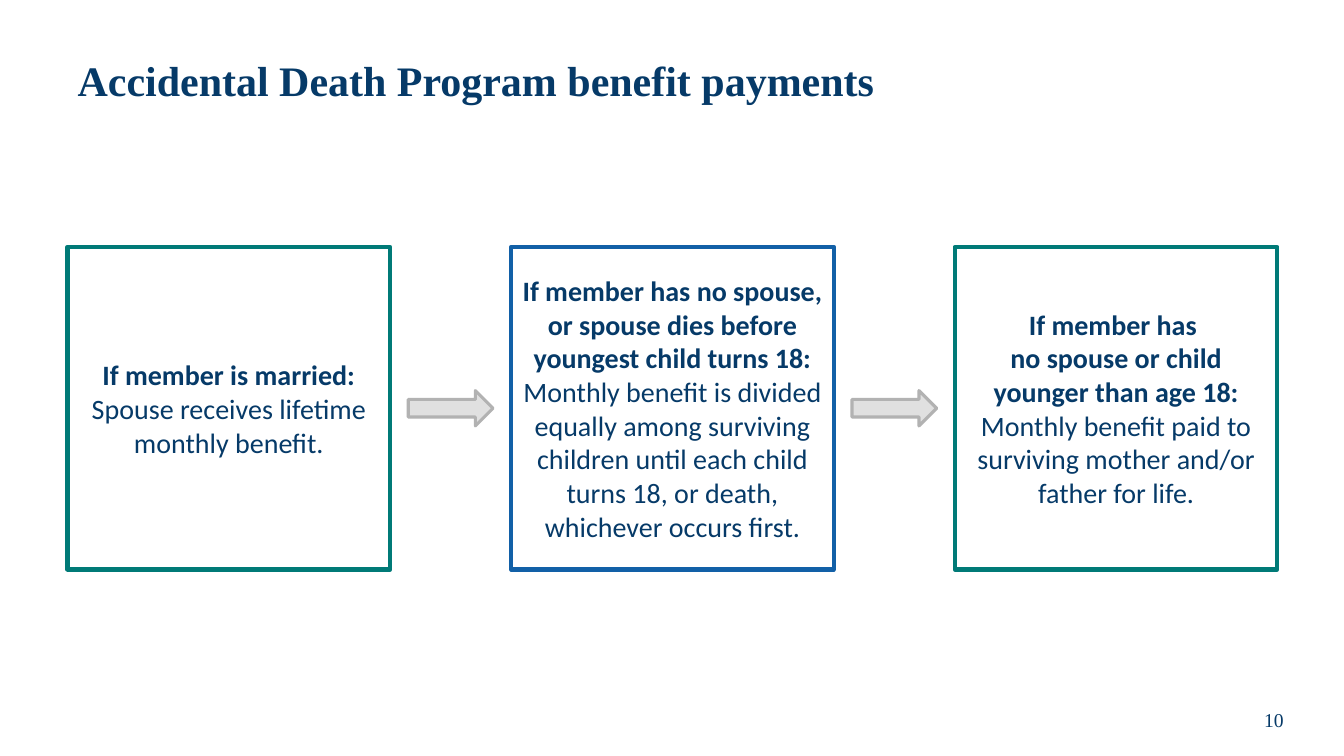
from pptx import Presentation
from pptx import util as u
from pptx.dml import color
from pptx.enum import shapes, text

NAVY, TEAL, BLUE = "063A68", "007A77", "1260A7"
BOX, PITCH, LEFT, TOP = 3.2, 4.4, 0.67, 2.45
ARROW_WIDTH, ARROW_HEIGHT = 0.84, 0.35


def rgb(value):
    return color.RGBColor.from_string(value)


def write(frame, *lines, font="Calibri", size=20, align=text.PP_ALIGN.CENTER,
          bold=(True, False), spacing=1.0, inset=0.1):
    frame.word_wrap = True
    frame.auto_size = text.MSO_AUTO_SIZE.NONE
    frame.vertical_anchor = text.MSO_ANCHOR.MIDDLE
    frame.margin_left = frame.margin_right = u.Inches(0.1)
    frame.margin_top = frame.margin_bottom = u.Inches(inset)
    for index, (line, weight) in enumerate(zip(lines, bold)):
        paragraph = frame.add_paragraph() if index else frame.paragraphs[0]
        paragraph.text = line
        paragraph.alignment = align
        paragraph.line_spacing = spacing
        for run in paragraph.runs:
            run.font.name = font
            run.font.size = u.Pt(size)
            run.font.bold = weight
            run.font.color.rgb = rgb(NAVY)


deck = Presentation()
deck.slide_width, deck.slide_height = u.Inches(13.33), u.Inches(7.5)
slide = deck.slides.add_slide(deck.slide_layouts[5])

heading = slide.shapes.title
heading.left, heading.top = u.Inches(LEFT), u.Inches(0.25)
heading.width, heading.height = u.Inches(12), u.Inches(1.15)
write(heading.text_frame, "Accidental Death Program benefit payments",
      font="Times New Roman", size=30, align=text.PP_ALIGN.LEFT,
      spacing=0.9, inset=0.05)

cases = [
    (TEAL, "If member is married:", "Spouse receives lifetime monthly benefit."),
    (BLUE, "If member has no spouse, or spouse dies before youngest child turns 18:",
     "Monthly benefit is divided equally among surviving children until each "
     "child turns 18, or death, whichever occurs first."),
    (TEAL, "If member has \vno spouse or child younger than age 18:",
     "Monthly benefit paid to surviving mother and/or father for life."),
]
for column, (border, condition, payment) in enumerate(cases):
    case = slide.shapes.add_shape(
        shapes.MSO_SHAPE.RECTANGLE, u.Inches(LEFT + column * PITCH), u.Inches(TOP),
        u.Inches(BOX), u.Inches(BOX))
    case.shadow.inherit = False
    case.fill.background()
    case.line.color.rgb = rgb(border)
    case.line.width = u.Pt(3)
    write(case.text_frame, condition, payment)

for gap in range(len(cases) - 1):
    next_step = slide.shapes.add_shape(
        shapes.MSO_SHAPE.RIGHT_ARROW,
        u.Inches(LEFT + gap * PITCH + BOX + (PITCH - BOX - ARROW_WIDTH) / 2),
        u.Inches(TOP + (BOX - ARROW_HEIGHT) / 2),
        u.Inches(ARROW_WIDTH), u.Inches(ARROW_HEIGHT))
    next_step.shadow.inherit = False
    next_step.fill.solid()
    next_step.fill.fore_color.rgb = rgb("E0E0E0")
    next_step.line.color.rgb = rgb("B2B2B2")
    next_step.line.width = u.Pt(2.25)

page_number = slide.shapes.add_textbox(
    u.Inches(12.05), u.Inches(6.89), u.Inches(1.17), u.Inches(0.5))
write(page_number.text_frame, "10", font="Times New Roman", size=14,
      bold=(False,), inset=0.05)

deck.save("out.pptx")
